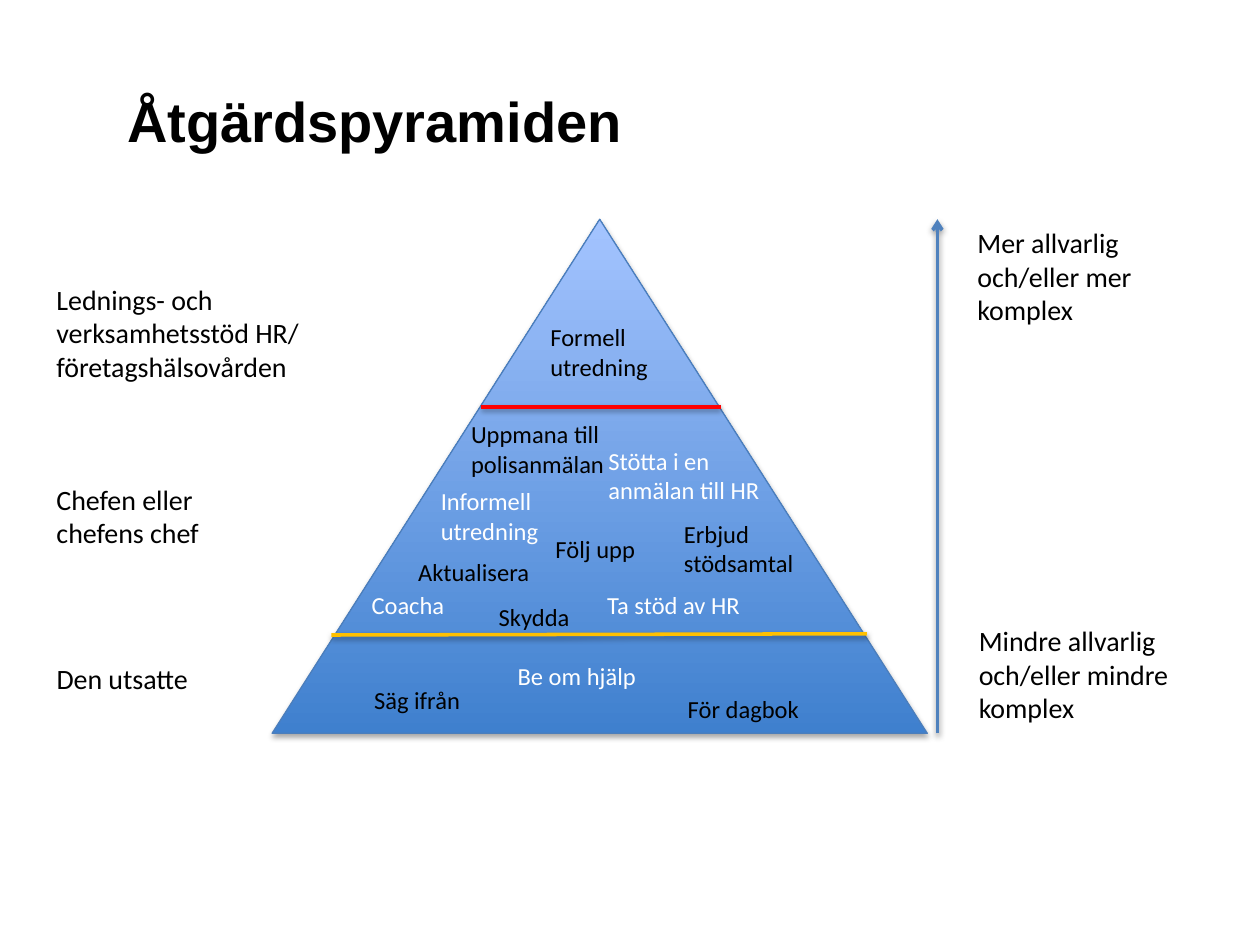
from lxml import etree
from pptx import Presentation
from pptx import util as u
from pptx.dml.color import RGBColor
from pptx.enum import shapes, text
from pptx.oxml import ns

COLORS = {
    "black": "000000",
    "white": "FFFFFF",
    "pyramid_bottom": "3F80CE",
    "pyramid_top": "A4C4FF",
    "pyramid_edge": "4B7EBC",
    "arrow": "4F81BD",
    "yellow": "FFC000",
    "red": "FF0000",
}


def add_text(content, left, top, width, height, size=14, color="black",
             font="Calibri", bold=False, inset_top=0.05):
    box = slide.shapes.add_textbox(
        u.Inches(left), u.Inches(top), u.Inches(width), u.Inches(height))
    frame = box.text_frame
    frame.word_wrap = True
    frame.auto_size = text.MSO_AUTO_SIZE.SHAPE_TO_FIT_TEXT
    frame.margin_top = u.Inches(inset_top)
    paragraph = frame.paragraphs[0]
    run = paragraph.add_run()
    run.text = content
    run.font.name = font
    run.font.size = u.Pt(size)
    run.font.bold = bold
    run.font.color.rgb = RGBColor.from_string(COLORS[color])


def add_shadow(shape, distance, opacity):
    effects = etree.SubElement(shape.element.spPr, ns.qn("a:effectLst"))
    shadow = etree.SubElement(
        effects, ns.qn("a:outerShdw"), blurRad=str(u.Pt(3.1)),
        dist=str(u.Pt(distance)), dir="5400000", rotWithShape="0")
    shade = etree.SubElement(shadow, ns.qn("a:srgbClr"), val=COLORS["black"])
    etree.SubElement(shade, ns.qn("a:alpha"), val=str(opacity * 1000))


presentation = Presentation()
presentation.slide_width = u.Inches(10)
presentation.slide_height = u.Inches(7.5)
slide = presentation.slides.add_slide(presentation.slide_layouts[6])

# Title
add_text("Åtgärdspyramiden", 0.91, 0.6, 7.95, 0.79,
         size=32, font="Arial", bold=True, inset_top=0.09)

# Pyramid, dark at the base and light at the tip
pyramid = slide.shapes.add_shape(
    shapes.MSO_SHAPE.ISOSCELES_TRIANGLE,
    u.Inches(2.16), u.Inches(1.74), u.Inches(5.2), u.Inches(4.08))
pyramid.fill.gradient()
pyramid.fill.gradient_angle = 90
for stop, position, name in zip(pyramid.fill.gradient_stops, (0, 1),
                                ("pyramid_bottom", "pyramid_top")):
    stop.position = position
    stop.color.rgb = RGBColor.from_string(COLORS[name])
pyramid.line.color.rgb = RGBColor.from_string(COLORS["pyramid_edge"])
pyramid.line.width = u.Pt(0.75)
add_shadow(pyramid, 1.8, 35)

# Severity arrow and the lines between the levels
for x1, y1, x2, y2, color in [
    (7.44, 5.82, 7.44, 1.74, "arrow"),
    (2.63, 5.04, 6.88, 5.03, "yellow"),
    (3.82, 3.23, 5.72, 3.23, "red"),
]:
    connector = slide.shapes.add_connector(
        shapes.MSO_CONNECTOR.STRAIGHT,
        u.Inches(x1), u.Inches(y1), u.Inches(x2), u.Inches(y2))
    connector.line.color.rgb = RGBColor.from_string(COLORS[color])
    connector.line.width = u.Pt(2)
    if color == "arrow":
        etree.SubElement(connector.line._get_or_add_ln(),
                         ns.qn("a:tailEnd"), type="arrow")
    add_shadow(connector, 1.6, 38)

# Measures inside the pyramid, from tip to base
for content, left, top, width, height, color in [
    ("Formell utredning", 4.27, 2.51, 1.07, 0.57, "black"),
    ("Uppmana till polisanmälan", 3.64, 3.28, 1.26, 0.57, "black"),
    ("Stötta i en anmälan till HR", 4.73, 3.49, 1.53, 0.57, "white"),
    ("Informell utredning", 3.4, 3.81, 1.16, 0.57, "white"),
    ("Erbjud stödsamtal", 5.33, 4.07, 1.08, 0.57, "black"),
    ("Följ upp", 4.31, 4.19, 1.02, 0.34, "black"),
    ("Aktualisera", 3.22, 4.37, 1.22, 0.34, "black"),
    ("Coacha", 2.85, 4.63, 0.79, 0.34, "white"),
    ("Ta stöd av HR", 4.72, 4.63, 1.52, 0.34, "white"),
    ("Skydda", 3.86, 4.73, 0.98, 0.34, "black"),
    ("Be om hjälp", 4.01, 5.2, 1.48, 0.34, "white"),
    ("Säg ifrån", 2.87, 5.39, 1.05, 0.34, "black"),
    ("För dagbok", 5.36, 5.46, 1.28, 0.34, "black"),
]:
    add_text(content, left, top, width, height, color=color)

# Who acts (left) and how serious it is (right)
for content, left, top, width, height in [
    ("Lednings- och verksamhetsstöd HR/ företagshälsovården",
     0.35, 2.19, 2.36, 0.91),
    ("Chefen eller chefens chef", 0.35, 3.78, 1.73, 0.64),
    ("Den utsatte", 0.35, 5.2, 1.65, 0.37),
    ("Mer allvarlig och/eller mer komplex", 7.66, 1.74, 1.5, 0.91),
    ("Mindre allvarlig och/eller mindre komplex", 7.67, 4.9, 1.73, 0.91),
]:
    add_text(content, left, top, width, height, size=16)

presentation.save("out.pptx")
